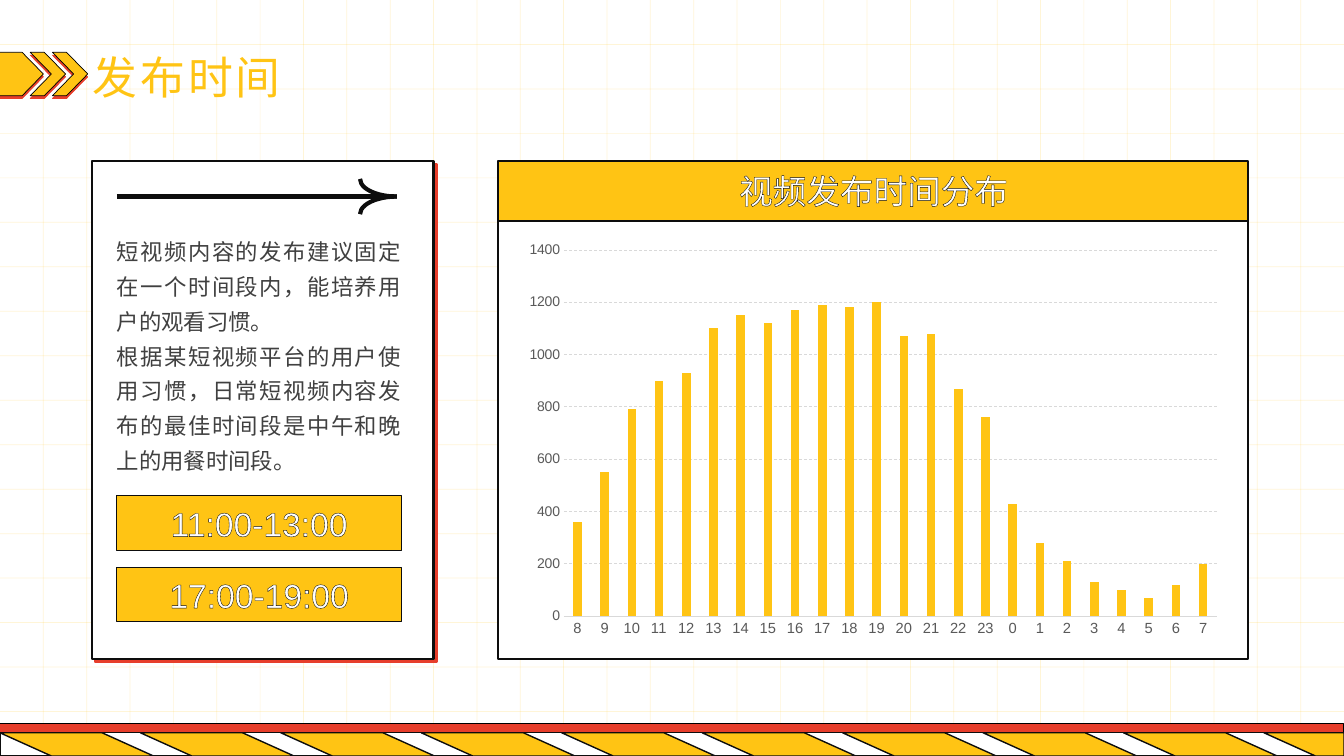
import dataclasses

import pptx
import pptx.chart.data
import pptx.dml.color
import pptx.enum.chart
import pptx.enum.dml
import pptx.enum.shapes
import pptx.enum.text
import pptx.oxml
import pptx.oxml.ns
import pptx.util

RGB = pptx.dml.color.RGBColor
YELLOW = RGB(0xFF, 0xC4, 0x14)
RED = RGB(0xE7, 0x3E, 0x2B)
INK = RGB(0x0D, 0x0D, 0x0D)
BLACK = RGB(0, 0, 0)
WHITE = RGB(0xFF, 0xFF, 0xFF)
BODY_GREY = RGB(0x40, 0x40, 0x40)
AXIS_GREY = RGB(0x59, 0x59, 0x59)
GRID_GREY = RGB(0xD9, 0xD9, 0xD9)

JP_FONT = "Noto Sans CJK JP"
SC_FONT = "Noto Sans CJK SC"
Pt = pptx.util.Pt
SHAPE = pptx.enum.shapes.MSO_SHAPE
ALIGN = pptx.enum.text.PP_ALIGN
ANCHOR = pptx.enum.text.MSO_ANCHOR
A_NS = 'xmlns:a="http://schemas.openxmlformats.org/drawingml/2006/main"'


@dataclasses.dataclass
class Box:
    left: float
    top: float
    width: float
    height: float

    def point(self, x, y):
        """Point at percentages of this box."""
        return round(self.left + self.width * x / 100), round(self.top + self.height * y / 100)

    def inner(self, x, y, w, h):
        """Inner box at percentages of this box."""
        return Box(*self.point(x, y), round(self.width * w / 100), round(self.height * h / 100))

    def place(self):
        return self.left, self.top, self.width, self.height


# Shared drawing helpers
def paint(shape, fill, line, weight, shadow=None):
    shape.shadow.inherit = False
    if fill is None:
        shape.fill.background()
    else:
        shape.fill.solid()
        shape.fill.fore_color.rgb = fill
    shape.line.color.rgb = line
    shape.line.width = Pt(weight)
    if shadow:
        distance, angle = shadow
        effects = shape._element.spPr.find(pptx.oxml.ns.qn("a:effectLst"))
        effects.append(pptx.oxml.parse_xml(
            f'<a:outerShdw {A_NS} blurRad="0" dist="{Pt(distance)}" dir="{angle * 60000}" '
            f'algn="tl" rotWithShape="0"><a:srgbClr val="{RED}"/></a:outerShdw>'))
    return shape


def add_block(slide, kind, box, fill, line, weight, shadow=None):
    block = paint(slide.shapes.add_shape(kind, *box.place()), fill, line, weight, shadow)
    if kind == SHAPE.ROUNDED_RECTANGLE:
        block.adjustments[0] = 0
    return block


def add_outline(slide, box, contours, line, weight, shadow=None):
    builder = None
    for contour in contours:
        start, *rest = [box.point(x, y) for x, y in contour]
        if builder is None:
            builder = slide.shapes.build_freeform(*start, scale=1.0)
        else:
            builder.move_to(*start)
        builder.add_line_segments(rest, close=True)
    return paint(builder.convert_to_shape(), YELLOW, line, weight, shadow)


def add_line(slide, start, end, color, weight, alpha=None):
    line = slide.shapes.add_connector(pptx.enum.shapes.MSO_CONNECTOR.STRAIGHT, *start, *end)
    line.line.color.rgb = color
    line.line.width = Pt(weight)
    properties = line._element.spPr
    if alpha:
        tint = properties.find(".//" + pptx.oxml.ns.qn("a:srgbClr"))
        tint.append(pptx.oxml.parse_xml(f'<a:alpha {A_NS} val="{alpha * 1000}"/>'))
    properties.append(pptx.oxml.parse_xml(f"<a:effectLst {A_NS}/>"))


def write_text(frame, *paragraphs, size, font, color, align=ALIGN.CENTER, anchor=ANCHOR.TOP,
               wrap=True, leading=None, tracking=None, outline=None):
    frame.margin_left = frame.margin_right = frame.margin_top = frame.margin_bottom = 0
    frame.word_wrap = wrap
    frame.auto_size = pptx.enum.text.MSO_AUTO_SIZE.SHAPE_TO_FIT_TEXT
    frame.vertical_anchor = anchor
    for index, content in enumerate(paragraphs):
        paragraph = frame.add_paragraph() if index else frame.paragraphs[0]
        paragraph.alignment = align
        paragraph.line_spacing = leading
        run = paragraph.add_run()
        run.text = content
        run.font.size = Pt(size)
        run.font.name = font
        run.font.color.rgb = color
        properties = run._r.get_or_add_rPr()
        properties.find(pptx.oxml.ns.qn("a:latin")).addnext(
            pptx.oxml.parse_xml(f'<a:ea {A_NS} typeface="{font}"/>'))
        if tracking:
            properties.set("spc", str(tracking * 100))
        if outline:
            edge, weight = outline
            properties.insert(0, pptx.oxml.parse_xml(
                f'<a:ln {A_NS} w="{Pt(weight)}"><a:solidFill><a:srgbClr val="{edge}"/>'
                "</a:solidFill></a:ln>"))


def add_text(slide, box, *paragraphs, **style):
    write_text(slide.shapes.add_textbox(*box.place()).text_frame, *paragraphs, **style)


# Regions of the slide
def draw_background_grid(slide, page, columns=31, rows=17):
    for row in range(rows - 1, 0, -1):
        y = 100 * row / rows
        add_line(slide, page.point(0, y), page.point(100, y), YELLOW, 0.5, alpha=17)
    for column in range(columns - 1, 0, -1):
        x = 100 * column / columns
        add_line(slide, page.point(x, 0), page.point(x, 100), YELLOW, 0.5, alpha=17)


def draw_title(slide, page):
    # Tag and two chevrons
    band = page.inner(0, 6.93, 6.53, 5.73)
    tag = [(-1.15, 0), (25.29, 0), (49.43, 50), (25.29, 100), (-1.15, 100)]
    chevrons = [[(x, 0), (x + 16.09, 0), (x + 40.23, 50), (x + 16.09, 100), (x, 100),
                 (x + 24.14, 50)] for x in (34.48, 59.77)]
    for contour in (tag, *chevrons):
        add_outline(slide, band, [contour], BLACK, 0.5, shadow=(2, 90))
    # Title
    title = slide.shapes.title
    title.left, title.top, title.width, title.height = page.inner(6.9, 7.2, 14.33, 6.67).place()
    write_text(title.text_frame, "发布时间", size=32, font=JP_FONT, color=YELLOW,
               align=ALIGN.LEFT, anchor=ANCHOR.MIDDLE, wrap=False, leading=0.9,
               tracking=2, outline=(BLACK, 0.5))
    slide.shapes._spTree.append(title._element)


def draw_hazard_strip(slide, page, stripes=10, pitch=10.45, slant=3.83, run=7.6):
    add_block(slide, SHAPE.RECTANGLE, page.inner(0, 95.73, 100, 3.33), RED, BLACK, 0)
    strip = page.inner(0, 96.93, 100, 3.07)
    add_block(slide, SHAPE.RECTANGLE, strip, WHITE, INK, 1)
    contours = []
    for index in range(stripes):
        x = index * pitch
        contours.append([(x, 0), (x + slant, 100), (min(x + slant + run, 100), 100),
                         (min(x + run, 100), 0)])
    add_outline(slide, strip, contours, INK, 1)


def draw_advice_panel(slide, panel):
    add_block(slide, SHAPE.RECTANGLE, panel, WHITE, INK, 1.5, shadow=(3, 45))
    # Arrow with a curved head
    add_line(slide, panel.point(7.37, 7.09), panel.point(88.5, 7.09), INK, 3)
    for y, flipped in ((0, False), (7.09, True)):
        barb = add_block(slide, SHAPE.ARC, panel.inner(78.47, y, 21.53, 7.09), None, INK, 3)
        barb.rotation = 180
        if flipped:
            barb._element.spPr.find(pptx.oxml.ns.qn("a:xfrm")).set("flipV", "1")
    # Advice
    add_text(slide, panel.inner(7.37, 13.77, 83.19, 48.99),
             "短视频内容的发布建议固定在一个时间段内，能培养用户的观看习惯。",
             "根据某短视频平台的用户使用习惯，日常短视频内容发布的最佳时间段是中午和晚上的用餐时间段。",
             size=16, font=SC_FONT, color=BODY_GREY, align=ALIGN.JUSTIFY, leading=1.3)
    # Best time slots
    for index, hours in enumerate(("11:00-13:00", "17:00-19:00")):
        slot = panel.inner(7.37, 67.21 + 14.37 * index, 83.19, 10.93)
        add_block(slide, SHAPE.ROUNDED_RECTANGLE, slot, YELLOW, INK, 0.75)
        add_text(slide, slot.inner(15.25, 12.96, 69.5, 74.07), hours, size=24, font="Arial",
                 color=WHITE, outline=(INK, 0.75))


def draw_chart_panel(slide, panel):
    add_block(slide, SHAPE.RECTANGLE, panel.inner(0, 11.94, 100, 88.06), WHITE, INK, 1.5)
    header = panel.inner(0, 0, 100, 11.94)
    add_block(slide, SHAPE.ROUNDED_RECTANGLE, header, YELLOW, INK, 1.5)
    add_text(slide, header.inner(29.7, 15.25, 40.73, 67.8), "视频发布时间分布", size=24,
             font=JP_FONT, color=WHITE, outline=(INK, 0.5))
    # Posts by hour, from 8 round to 7
    posts = pptx.chart.data.CategoryChartData()
    posts.categories = [str(hour % 24) for hour in range(8, 32)]
    posts.add_series("Series 1", [
        360, 550, 790, 900, 930, 1100, 1150, 1120, 1170, 1190, 1180, 1200,
        1070, 1080, 870, 760, 430, 280, 210, 130, 100, 70, 120, 200])
    chart = slide.shapes.add_chart(pptx.enum.chart.XL_CHART_TYPE.COLUMN_CLUSTERED,
                                   *panel.inner(2.28, 14.57, 95.43, 82.59).place(), posts).chart
    chart.has_legend = chart.has_title = False
    chart.font.name, chart.font.size = "Arial", Pt(10)
    chart.font.color.rgb = BLACK
    bars = chart.plots[0]
    bars.gap_width, bars.overlap, bars.vary_by_categories = 219, -27, False
    bars.series[0].format.fill.solid()
    bars.series[0].format.fill.fore_color.rgb = YELLOW
    # Axes
    hours, counts = chart.category_axis, chart.value_axis
    for axis, size in ((hours, 10.5), (counts, 10)):
        axis.major_tick_mark = axis.minor_tick_mark = pptx.enum.chart.XL_TICK_MARK.NONE
        axis.tick_labels.font.name, axis.tick_labels.font.size = "Arial", Pt(size)
        axis.tick_labels.font.color.rgb = AXIS_GREY
    hours.format.line.color.rgb = GRID_GREY
    hours.format.line.width = Pt(0.75)
    counts.minimum_scale, counts.maximum_scale, counts.major_unit = 0, 1400, 200
    counts.format.line.fill.background()
    rules = counts.major_gridlines.format.line
    rules.color.rgb = GRID_GREY
    rules.width = Pt(0.5)
    rules.dash_style = pptx.enum.dml.MSO_LINE.DASH


def main():
    deck = pptx.Presentation()
    deck.slide_width, deck.slide_height = pptx.util.Inches(13.33), pptx.util.Inches(7.5)
    slide = deck.slides.add_slide(deck.slide_layouts[5])
    page = Box(0, 0, deck.slide_width, deck.slide_height)
    draw_background_grid(slide, page)
    draw_hazard_strip(slide, page)
    draw_title(slide, page)
    draw_advice_panel(slide, page.inner(6.83, 21.33, 25.43, 65.87))
    draw_chart_panel(slide, page.inner(37.06, 21.33, 55.81, 65.87))
    deck.save("out.pptx")


if __name__ == "__main__":
    main()
